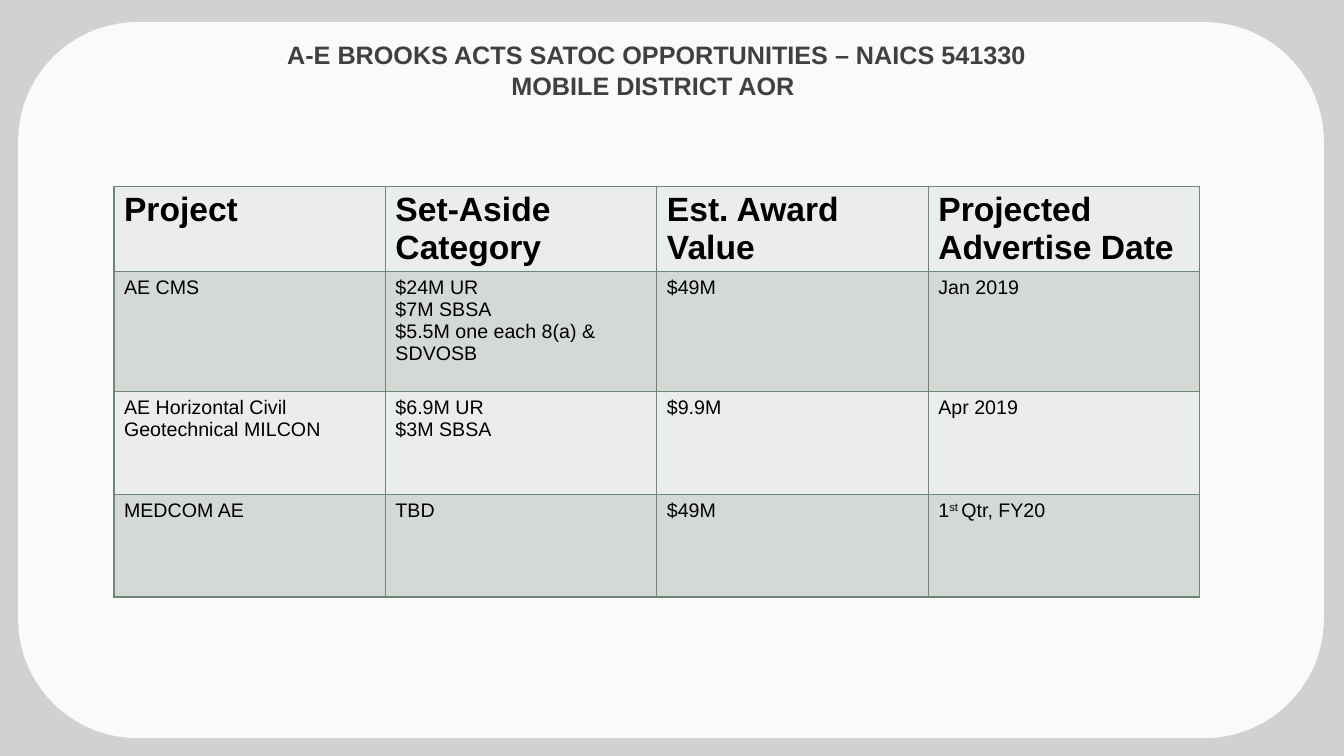
from lxml import etree
from pptx import Presentation
from pptx.dml.color import RGBColor
from pptx.enum.shapes import MSO_SHAPE
from pptx.enum.text import MSO_ANCHOR, PP_ALIGN
from pptx.oxml.ns import qn
from pptx.util import Pt

ROUNDED = MSO_SHAPE.ROUNDED_RECTANGLE
MIDDLE = MSO_ANCHOR.MIDDLE
CENTER = PP_ALIGN.CENTER

BACKDROP = RGBColor(0xD1, 0xD1, 0xD1)
PANEL = RGBColor(0xFA, 0xFA, 0xFA)
TITLE_GRAY = RGBColor(0x40, 0x40, 0x40)
BLACK = RGBColor(0x00, 0x00, 0x00)
LIGHT_ROW = RGBColor(0xEB, 0xED, 0xEC)
DARK_ROW = RGBColor(0xD5, 0xD9, 0xD6)
GRID_GREEN = RGBColor(0x6E, 0x87, 0x78)

TITLE = "A-E BROOKS ACTS SATOC OPPORTUNITIES – NAICS 541330\vMOBILE DISTRICT AOR "
OPPORTUNITIES = [
    ["Project", "Set-Aside Category", "Est. Award Value", "Projected Advertise Date"],
    ["AE CMS", "$24M UR\n$7M SBSA\n$5.5M one each 8(a) & SDVOSB", "$49M", "Jan 2019"],
    ["AE Horizontal Civil Geotechnical MILCON", "$6.9M UR\n$3M SBSA", "$9.9M", "Apr 2019"],
    ["MEDCOM AE", "TBD", "$49M", "1"],
]
ROW_HEIGHTS = [60.7, 85.7, 73.4, 73.4]
COLUMN_WIDTH = 193.9


class SlideBuilder:
    font_name = "Arial"

    def __init__(self, deck):
        self.page = deck.slides.add_slide(deck.slide_layouts[5])
        fill = self.page.background.fill
        fill.solid()
        fill.fore_color.rgb = BACKDROP

    def style(self, paragraph, size, color, bold):
        for span in paragraph.runs:
            span.font.name = self.font_name
            span.font.size = Pt(size)
            span.font.bold = bold
            span.font.color.rgb = color

    def panel(self, left, top, width, height):
        box = self.page.shapes.add_shape(ROUNDED, Pt(left), Pt(top), Pt(width), Pt(height))
        box.shadow.inherit = False
        box.fill.solid()
        box.fill.fore_color.rgb = PANEL
        box.line.fill.background()
        # Send behind the title placeholder
        self.page.shapes.title.element.addprevious(box.element)

    def title(self, text, left, top, width, height):
        box = self.page.shapes.title
        box.left, box.top, box.width, box.height = Pt(left), Pt(top), Pt(width), Pt(height)
        frame = box.text_frame
        frame.text = text
        frame.word_wrap = True
        frame.vertical_anchor = MIDDLE
        paragraph = frame.paragraphs[0]
        paragraph.alignment = CENTER
        self.style(paragraph, 18, TITLE_GRAY, True)

    def border(self, cell):
        properties = cell._tc.get_or_add_tcPr()
        for position, side in enumerate(("a:lnL", "a:lnR", "a:lnT", "a:lnB")):
            line = etree.Element(qn(side), w=str(Pt(1)))
            solid = etree.SubElement(line, qn("a:solidFill"))
            etree.SubElement(solid, qn("a:srgbClr"), val=str(GRID_GREEN))
            properties.insert(position, line)

    def table(self, rows, left, top, column_width, row_heights):
        columns = len(rows[0])
        grid = self.page.shapes.add_table(
            len(rows), columns, Pt(left), Pt(top),
            Pt(column_width * columns), Pt(sum(row_heights))).table
        for column in grid.columns:
            column.width = Pt(column_width)
        for index, (texts, height) in enumerate(zip(rows, row_heights)):
            grid.rows[index].height = Pt(height)
            for cell, text in zip(grid.rows[index].cells, texts):
                cell.text = text
                cell.fill.solid()
                cell.fill.fore_color.rgb = DARK_ROW if index % 2 else LIGHT_ROW
                self.border(cell)
                for paragraph in cell.text_frame.paragraphs:
                    self.style(paragraph, 14 if index else 24, BLACK, index == 0)
        return grid

    def ordinal(self, cell, suffix, rest):
        paragraph = cell.text_frame.paragraphs[0]
        raised = paragraph.add_run()
        raised.text = suffix
        raised.font._element.set("baseline", "30000")
        paragraph.add_run().text = rest
        self.style(paragraph, 14, BLACK, False)


def main():
    deck = Presentation()
    deck.slide_width, deck.slide_height = Pt(960), Pt(540)
    builder = SlideBuilder(deck)

    # Backdrop panel and heading
    builder.panel(13, 15.8, 932.6, 511.4)
    builder.title(TITLE, 108, 22.3, 722, 55.4)

    # Opportunities table
    grid = builder.table(OPPORTUNITIES, 81.4, 133.2, COLUMN_WIDTH, ROW_HEIGHTS)
    builder.ordinal(grid.cell(3, 3), "st ", "Qtr, FY20")

    deck.save("out.pptx")


if __name__ == "__main__":
    main()
